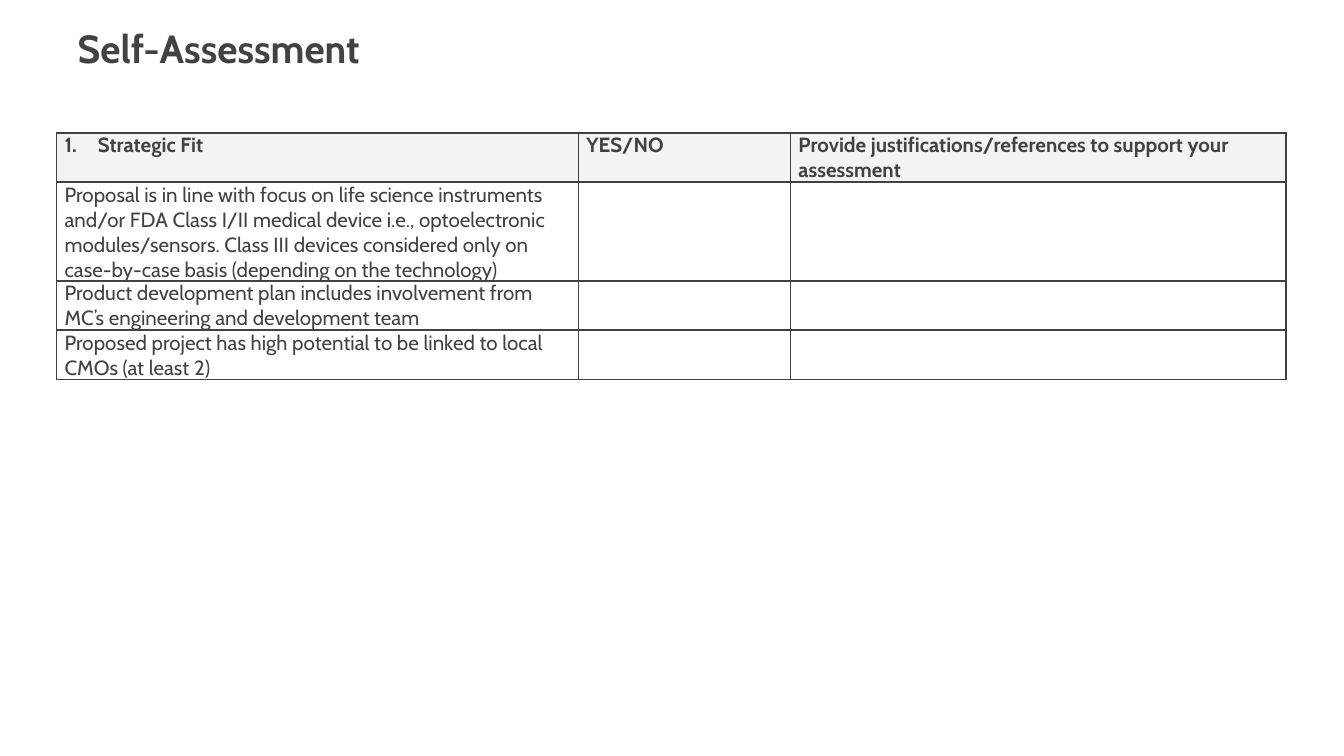
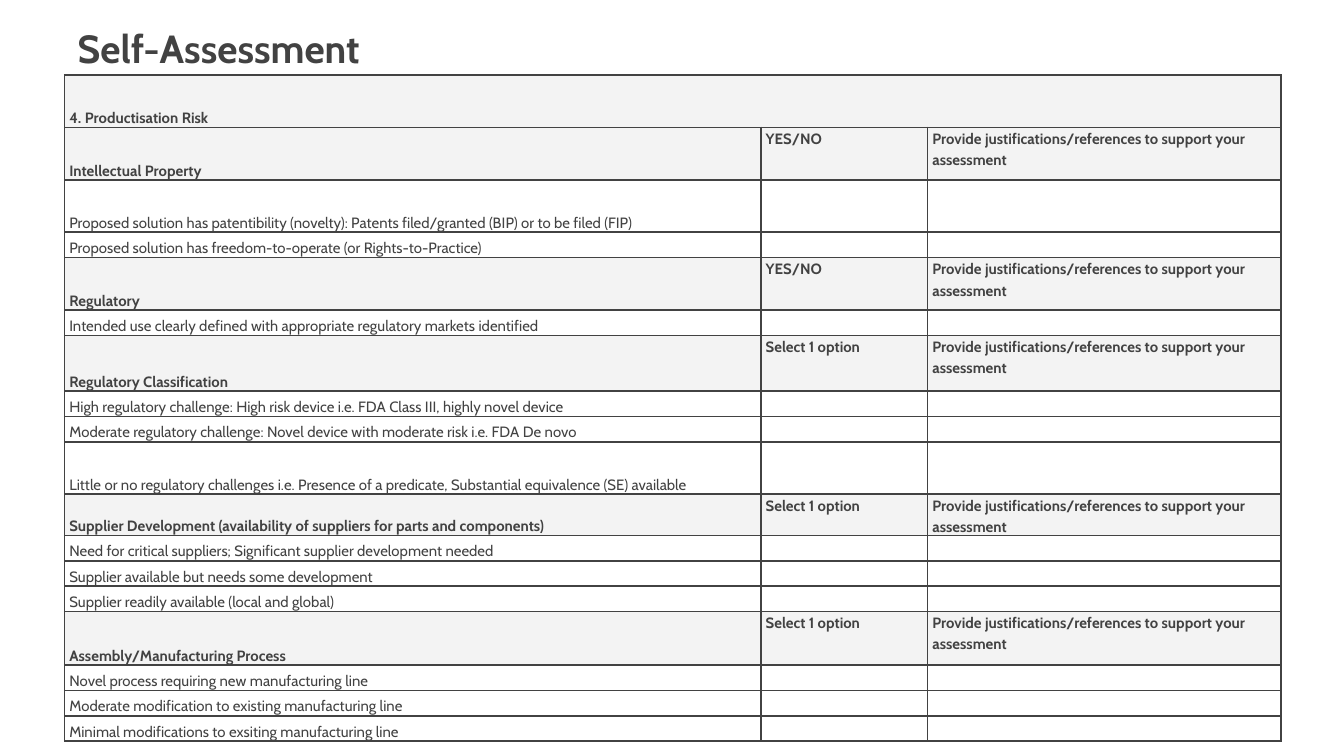
"""Build two self-assessment slides, each a title above a form table."""
from dataclasses import dataclass

from lxml import etree
from pptx import Presentation
from pptx.dml.color import RGBColor
from pptx.enum.text import MSO_ANCHOR
from pptx.oxml.ns import qn
from pptx.util import Cm, Pt

TOP = MSO_ANCHOR.TOP
BOTTOM = MSO_ANCHOR.BOTTOM
FONT = "Cabin"
INK = "424242"
SHADE = "F3F3F3"
TITLE = "Self-Assessment"
JUSTIFY = "Provide justifications/references to support your assessment"
YES_NO = "YES/NO"
SELECT = "Select 1 option"
THIN = 0.48
TALL = 0.99


@dataclass(frozen=True)
class Row:
    """One form row: a heading row is shaded and may name its answer column."""
    label: str
    height: float
    heading: bool = False
    answer: str = ""


@dataclass(frozen=True)
class Form:
    """Placement, text style and rows of one table, lengths in centimetres."""
    left: float
    top: float
    columns: tuple[float, ...]
    size: float
    inset: float
    label_anchor: MSO_ANCHOR
    rows: tuple[Row, ...]
    line_spacing: float = 1.0
    space_after: float = 0
    numbered: bool = False


STRATEGIC_FIT = Form(
    1.07, 2.51, (9.86, 4.01, 9.37), 11, 0.15, TOP,
    (
        Row("Strategic Fit", 0.93, True, YES_NO),
        Row("Proposal is in line with focus on life science instruments and/or FDA "
            "Class I/II medical device i.e., optoelectronic modules/sensors. Class III "
            "devices considered only on case-by-case basis (depending on the technology)",
            1.86),
        Row("Product development plan includes involvement from MC’s engineering "
            "and development team", 0.93),
        Row("Proposed project has high potential to be linked to local CMOs "
            "(at least 2)", 0.93),
    ),
    numbered=True,
)

PRODUCTISATION_RISK = Form(
    1.22, 1.42, (13.16, 3.15, 6.68), 8, 0.09, BOTTOM,
    (
        Row("4. Productisation Risk", TALL, True),
        Row("Intellectual Property", TALL, True, YES_NO),
        Row("Proposed solution has patentibility (novelty): Patents filed/granted "
            "(BIP) or to be filed (FIP)", TALL),
        Row("Proposed solution has freedom-to-operate (or Rights-to-Practice)", THIN),
        Row("Regulatory", TALL, True, YES_NO),
        Row("Intended use clearly defined with appropriate regulatory markets "
            "identified", THIN),
        Row("Regulatory Classification", 1.05, True, SELECT),
        Row("High regulatory challenge: High risk device i.e. FDA Class III, highly "
            "novel device", THIN),
        Row("Moderate regulatory challenge: Novel device with moderate risk i.e. FDA "
            "De novo", THIN),
        Row("Little or no regulatory challenges i.e. Presence of a predicate, "
            "Substantial equivalence (SE) available", TALL),
        Row("Supplier Development (availability of suppliers for parts and "
            "components)", 0.78, True, SELECT),
        Row("Need for critical suppliers; Significant supplier development needed", THIN),
        Row("Supplier available but needs some development", THIN),
        Row("Supplier readily available (local and global)", THIN),
        Row("Assembly/Manufacturing Process", 1.01, True, SELECT),
        Row("Novel process requiring new manufacturing line", THIN),
        Row("Moderate modification to existing manufacturing line", THIN),
        Row("Minimal modifications to exsiting manufacturing line", THIN),
    ),
    line_spacing=1.15,
    space_after=10,
)


def colour(value: str) -> RGBColor:
    """Turn a hex string into a colour."""
    return RGBColor.from_string(value)


def add_span(para, text: str, size: float, bold: bool) -> None:
    """Add one styled run to a paragraph."""
    span = para.add_run()
    span.text = text
    span.font.name = FONT
    span.font.size = Pt(size)
    span.font.bold = bold
    span.font.color.rgb = colour(INK)


def add_title(page) -> None:
    """Write the shared slide title."""
    box = page.shapes.add_textbox(Cm(1.22), Cm(0.33), Cm(18.26), Cm(1.14))
    box.text_frame.word_wrap = True
    add_span(box.text_frame.paragraphs[0], TITLE, 21, True)


def draw_borders(cell) -> None:
    """Draw a one-point line on every side of a cell."""
    properties = cell._tc.get_or_add_tcPr()
    for side in ("lnL", "lnR", "lnT", "lnB"):
        line = etree.SubElement(properties, qn(f"a:{side}"), w=str(Pt(1)))
        fill = etree.SubElement(line, qn("a:solidFill"))
        etree.SubElement(fill, qn("a:srgbClr"), val=INK)


def number_paragraph(para) -> None:
    """Give a paragraph an automatic number with a hanging indent."""
    properties = para._p.get_or_add_pPr()
    indent = Cm(0.63)
    properties.set("marL", str(indent))
    properties.set("indent", str(-indent))
    etree.SubElement(properties, qn("a:buFont"), typeface=FONT)
    etree.SubElement(properties, qn("a:buAutoNum"), type="arabicPeriod")


def fill_cell(cell, text: str, form: Form, heading: bool, anchor: MSO_ANCHOR) -> None:
    """Style one cell and write its text."""
    draw_borders(cell)
    if heading:
        cell.fill.solid()
        cell.fill.fore_color.rgb = colour(SHADE)
    else:
        cell.fill.background()
    cell.margin_left = cell.margin_right = Cm(form.inset)
    cell.margin_top = cell.margin_bottom = Cm(0)
    cell.vertical_anchor = anchor
    para = cell.text_frame.paragraphs[0]
    if text:
        para.line_spacing = form.line_spacing
        para.space_after = Pt(form.space_after)
        add_span(para, text, form.size, heading)
    else:
        etree.SubElement(para._p, qn("a:endParaRPr"), sz=str(form.size * 100))


def add_form(page, form: Form) -> None:
    """Draw a form table on a slide."""
    frame = page.shapes.add_table(
        len(form.rows), len(form.columns), Cm(form.left), Cm(form.top),
        Cm(sum(form.columns)), Cm(sum(row.height for row in form.rows)))
    table = frame.table
    table.first_row = table.horz_banding = False
    for column, width in zip(table.columns, form.columns):
        column.width = Cm(width)
    for index, row in enumerate(form.rows):
        table.rows[index].height = Cm(row.height)
        texts = (row.label, row.answer, JUSTIFY if row.answer else "")
        anchors = (form.label_anchor, TOP, TOP)
        for position, (text, anchor) in enumerate(zip(texts, anchors)):
            fill_cell(table.cell(index, position), text, form, row.heading, anchor)
        if row.heading and not row.answer:
            table.cell(index, 0).merge(table.cell(index, len(form.columns) - 1))
    if form.numbered:
        number_paragraph(table.cell(0, 0).text_frame.paragraphs[0])


def main() -> None:
    """Build and save the deck."""
    deck = Presentation()
    deck.slide_width, deck.slide_height = Cm(25.4), Cm(14.29)
    for form in (STRATEGIC_FIT, PRODUCTISATION_RISK):
        page = deck.slides.add_slide(deck.slide_layouts[6])
        add_title(page)
        add_form(page, form)
    deck.save("out.pptx")


if __name__ == "__main__":
    main()
